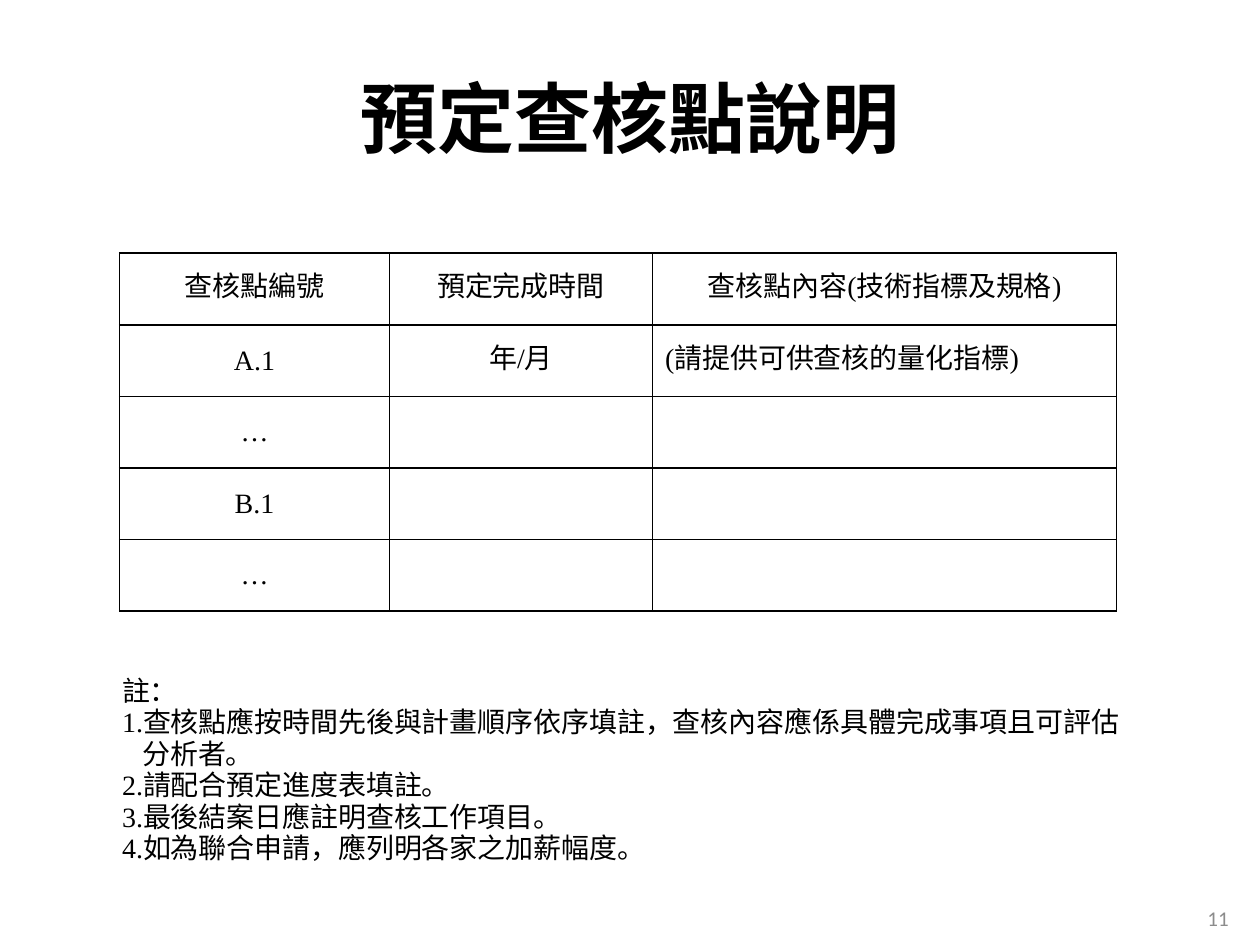
from dataclasses import dataclass

from lxml import etree
from pptx import Presentation
from pptx.dml.color import RGBColor
from pptx.enum.text import MSO_ANCHOR, PP_ALIGN
from pptx.oxml.ns import qn
from pptx.util import Inches, Pt

MIDDLE, TOP = MSO_ANCHOR.MIDDLE, MSO_ANCHOR.TOP
LEFT, CENTER, RIGHT = PP_ALIGN.LEFT, PP_ALIGN.CENTER, PP_ALIGN.RIGHT


@dataclass(frozen=True)
class Theme:
    """Colours, fonts and type sizes of the slide."""

    ink: str = "000000"
    muted: str = "8C8C8C"
    paper: str = "FFFFFF"
    serif: str = "Times New Roman"
    sans: str = "Calibri"
    title: int = 44
    body: int = 16
    small: int = 12
    leading: int = 18
    border: int = 1


THEME = Theme()
COLUMN_WIDTHS = (2.14, 2.09, 3.68)
CHECKPOINTS = (
    ("查核點編號", "預定完成時間", "查核點內容(技術指標及規格)"),
    ("A.1", "年/月", "(請提供可供查核的量化指標)"),
    ("…", "", ""),
    ("B.1", "", ""),
    ("…", "", ""),
)
NOTES = (
    "註：",
    "1.查核點應按時間先後與計畫順序依序填註，查核內容應係具體完成事項且可評估分析者。",
    "2.請配合預定進度表填註。",
    "3.最後結案日應註明查核工作項目。",
    "4.如為聯合申請，應列明各家之加薪幅度。",
)


def style(paragraph, size, align=LEFT, color=THEME.ink, name=THEME.serif, bold=False):
    """Set the alignment and font of a paragraph."""
    paragraph.alignment = align
    font = paragraph.font
    font.size, font.name, font.bold = Pt(size), name, bold
    font.color.rgb = RGBColor.from_string(color)


def add_text_frame(slide, box, anchor):
    """Add a wrapping text box and return its text frame."""
    frame = slide.shapes.add_textbox(*map(Inches, box)).text_frame
    frame.word_wrap = True
    frame.vertical_anchor = anchor
    return frame


def add_line(slide, box, text, size, **font):
    """Place one line of text, centred vertically in its box."""
    paragraph = add_text_frame(slide, box, MIDDLE).paragraphs[0]
    paragraph.text = text
    style(paragraph, size, **font)


def set_borders(cell):
    """Draw a solid line on the four sides of a cell."""
    properties = cell._tc.get_or_add_tcPr()
    for index, side in enumerate(("a:lnL", "a:lnR", "a:lnT", "a:lnB")):
        line = etree.Element(qn(side), w=str(Pt(THEME.border)))
        fill = etree.SubElement(line, qn("a:solidFill"))
        etree.SubElement(fill, qn("a:srgbClr"), val=THEME.ink)
        properties.insert(index, line)


def fill_cell(cell, text, align, left_margin):
    """Write and format one table cell."""
    cell.fill.solid()
    cell.fill.fore_color.rgb = RGBColor.from_string(THEME.paper)
    cell.vertical_anchor = MIDDLE
    cell.margin_left, cell.margin_right = Inches(left_margin), Inches(0.04)
    cell.margin_top = cell.margin_bottom = 0
    paragraph = cell.text_frame.paragraphs[0]
    paragraph.text = text
    paragraph.line_spacing = Pt(THEME.leading)
    style(paragraph, THEME.body, align)
    set_borders(cell)


def add_checkpoint_table(slide, box):
    """Place the checkpoint table with equal row heights."""
    shape = slide.shapes.add_table(len(CHECKPOINTS), len(COLUMN_WIDTHS), *map(Inches, box))
    table = shape.table
    table.first_row = table.horz_banding = False
    for column, width in zip(table.columns, COLUMN_WIDTHS):
        column.width = Inches(width)
    for row, texts in enumerate(CHECKPOINTS):
        for column, text in enumerate(texts):
            is_detail = row > 0 and column == 2
            align, margin = (LEFT, 0.1) if is_detail else (CENTER, 0.04)
            fill_cell(table.cell(row, column), text, align, margin)


def add_notes(slide, box):
    """Place the notes with hanging indents."""
    frame = add_text_frame(slide, box, TOP)
    for index, text in enumerate(NOTES):
        paragraph = frame.add_paragraph() if index else frame.paragraphs[0]
        paragraph.text = text
        left, hanging = (0.19, -0.16) if index == 1 else (0.49, -0.46)
        properties = paragraph._p.get_or_add_pPr()
        properties.set("marL", str(Inches(left)))
        properties.set("indent", str(Inches(hanging)))
        paragraph.line_spacing = Pt(THEME.leading)
        style(paragraph, THEME.body)


def main():
    """Build and save the slide."""
    presentation = Presentation()
    presentation.slide_width, presentation.slide_height = Inches(10), Inches(7.5)
    slide = presentation.slides.add_slide(presentation.slide_layouts[6])
    add_line(slide, (0.5, 0.3, 9, 1.25), "預定查核點說明", THEME.title, align=CENTER, bold=True)
    add_checkpoint_table(slide, (0.95, 2.01, 7.91, 2.84))
    add_notes(slide, (0.84, 5.31, 8.18, 1.88))
    add_line(slide, (7.52, 7.09, 2.33, 0.4), "11", THEME.small,
             align=RIGHT, color=THEME.muted, name=THEME.sans)
    presentation.save("out.pptx")


if __name__ == "__main__":
    main()
